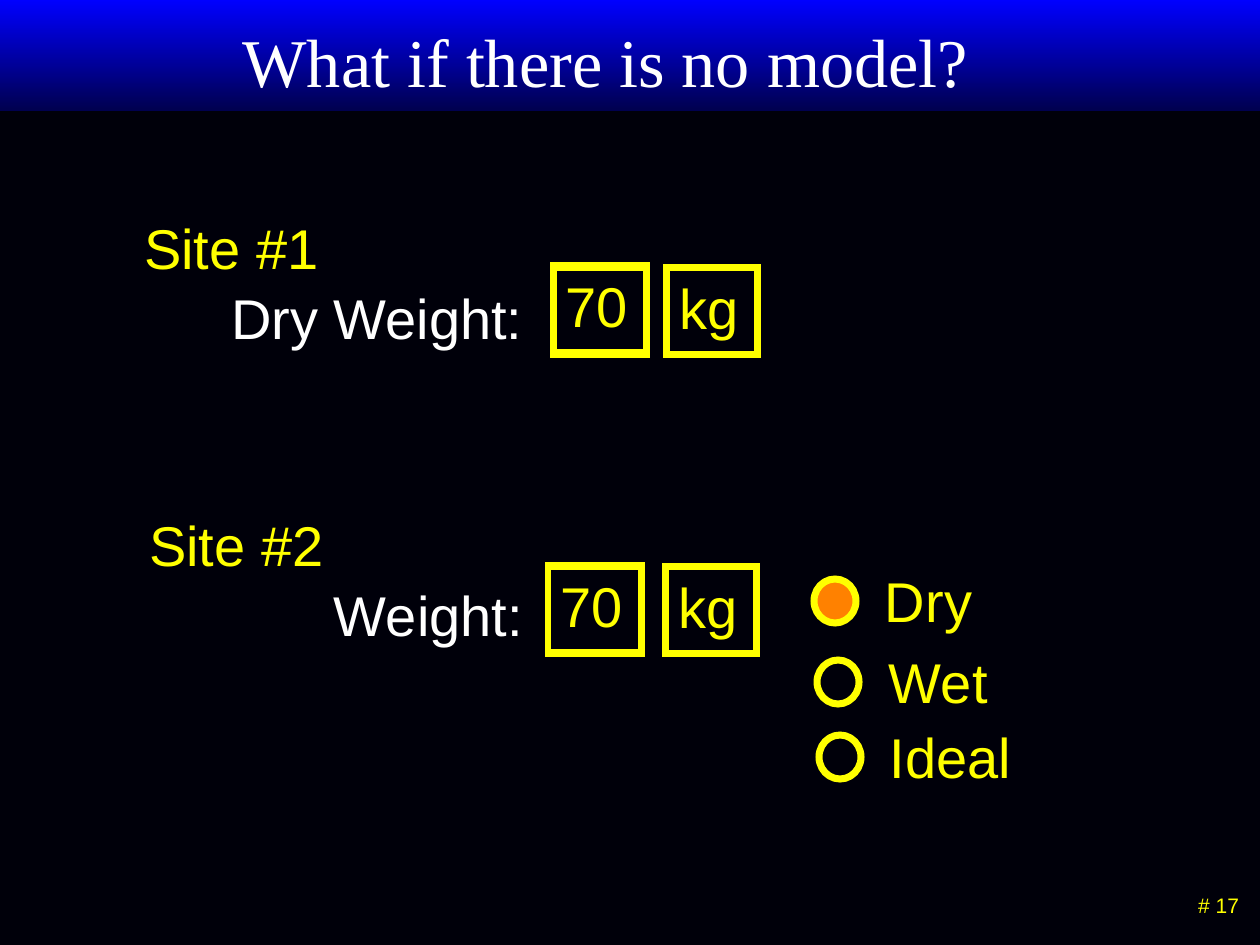
from lxml import etree
from pptx import Presentation
from pptx.dml.color import RGBColor
from pptx.enum.shapes import MSO_SHAPE as Shape
from pptx.enum.text import MSO_ANCHOR as Anchor, PP_ALIGN as Align
from pptx.oxml.ns import qn
from pptx.util import Pt

PX = 914400 / 126
COLORS = {name: RGBColor.from_string(code) for name, code in {
    "night": "00000A", "navy": "00004F", "blue": "0000FF",
    "yellow": "FFFF00", "white": "FFFFFF", "orange": "FF8100"}.items()}

deck = Presentation()
deck.slide_width, deck.slide_height = round(1260 * PX), round(945 * PX)
page = deck.slides.add_slide(deck.slide_layouts[6])
page.background.fill.solid()
page.background.fill.fore_color.rgb = COLORS["night"]


def write(box, text, color, size=32, align=Align.CENTER, font="Arial",
          anchor=Anchor.TOP, left=0, right=0):
    frame = box.text_frame
    frame.word_wrap = False
    frame.vertical_anchor = anchor
    frame.margin_left, frame.margin_right = round(left * PX), round(right * PX)
    frame.margin_top = frame.margin_bottom = round(6 * PX)
    para = frame.paragraphs[0]
    para.text, para.alignment = text, align
    para.font.name, para.font.size = font, Pt(size)
    para.font.color.rgb = COLORS[color]


def outline(kind, left, top, width, height, fill=None):
    shape = page.shapes.add_shape(
        kind, *(round(n * PX) for n in (left, top, width, height)))
    shape.shadow.inherit = False
    shape.fill.background()
    if fill:
        shape.fill.solid()
        shape.fill.fore_color.rgb = COLORS[fill]
    shape.line.color.rgb = COLORS["yellow"]
    shape.line.width = Pt(4)
    # Square corners on the line
    line = shape.element.spPr.find(qn("a:ln"))
    etree.SubElement(line, qn("a:miter"), lim="800000")
    return shape


# Title band, fading from blue down to navy
band = outline(Shape.RECTANGLE, 0, 0, 1260, 111)
band.line.fill.background()
band.fill.gradient()
band.fill.gradient_angle = 270
for stop, color in zip(band.fill.gradient_stops, ("blue", "navy")):
    stop.color.rgb = COLORS[color]

# Title and page number
title = page.shapes.add_textbox(*(round(n * PX) for n in (23, 13, 1165, 94)))
write(title, "What if there is no model?", "white", 39,
      font="Times New Roman", anchor=Anchor.BOTTOM)
number = page.shapes.add_textbox(*(round(n * PX) for n in (1121, 887, 131, 43)))
write(number, "# 17", "yellow", 12, Align.RIGHT, right=13)

# Labels: text, colour, left, top, width, alignment, left inset
labels = [
    ("Site #1", "yellow", 132, 207, 199, Align.CENTER, 0),
    ("Dry Weight:", "white", 218, 277, 318, Align.CENTER, 0),
    ("Site #2", "yellow", 137, 504, 199, Align.CENTER, 0),
    ("Weight:", "white", 321, 574, 215, Align.CENTER, 0),
    ("Dry", "yellow", 872, 560, 112, Align.LEFT, 13),
    ("Wet", "yellow", 876, 641, 125, Align.LEFT, 13),
    ("Ideal", "yellow", 877, 716, 146, Align.LEFT, 13),
]
for text, color, left, top, width, align, inset in labels:
    box = page.shapes.add_textbox(
        *(round(n * PX) for n in (left, top, width, 79)))
    write(box, text, color, align=align, left=inset)

# Entry fields: each value has a second frame just below the front one
fields = [(553, 266, 268, 666, 268), (548, 566, 567, 665, 567)]
for value_left, value_top, back_top, unit_left, unit_top in fields:
    outline(Shape.RECTANGLE, value_left, back_top, 94, 87)
    value = outline(Shape.RECTANGLE, value_left, value_top, 94, 87)
    write(value, "70", "yellow", left=13, right=19)
    unit = outline(Shape.RECTANGLE, unit_left, unit_top, 92, 87)
    write(unit, "kg", "yellow", left=13, right=19)

# Radio buttons, the first one chosen
for left, top, fill in [(814, 579, "orange"), (817, 660, None), (819, 735, None)]:
    outline(Shape.OVAL, left, top, 42, 44, fill)

deck.save("out.pptx")
